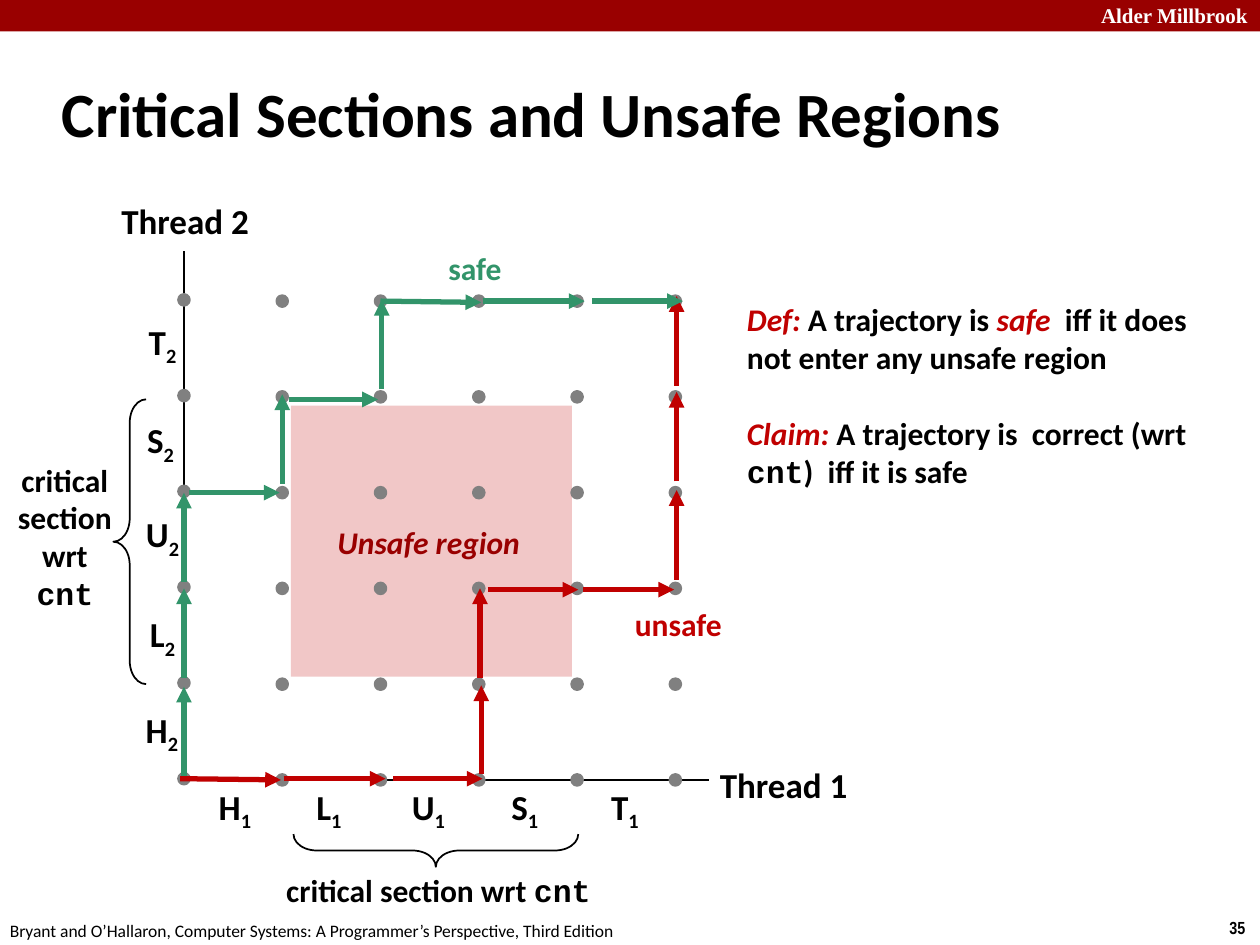
from itertools import product
from lxml.etree import SubElement as Sub
from pptx import Presentation
from pptx.dml.color import RGBColor as RGB
from pptx.enum.shapes import MSO_CONNECTOR as Conn, MSO_SHAPE as Kind
from pptx.enum.text import MSO_ANCHOR as Anchor, PP_ALIGN as Align
from pptx.oxml.ns import qn
from pptx.util import Inches, Pt

HUES = {
    "bar": "990000", "zone": "F1C7C7", "dot": "808080", "ink": "000000",
    "white": "FFFFFF", "safe": "32946A", "unsafe": "C00000",
}
SAFE = [
    (1.46, 6.16, 1.46, 5.45), (1.46, 5.38, 1.46, 4.67),
    (1.46, 4.62, 1.46, 3.91), (1.5, 3.91, 2.22, 3.91),
    (2.24, 3.84, 2.24, 3.13), (2.29, 3.17, 3, 3.17),
    (3.03, 3.09, 3.03, 2.38), (3.02, 2.39, 3.82, 2.4),
    (3.83, 2.39, 4.64, 2.39), (4.7, 2.39, 5.42, 2.39),
]
UNSAFE = [
    (1.43, 6.18, 2.23, 6.19), (2.25, 6.18, 3.06, 6.18),
    (3.12, 6.18, 3.83, 6.18), (3.82, 6.14, 3.82, 5.44),
    (3.81, 5.38, 3.81, 4.67), (3.87, 4.68, 4.59, 4.68),
    (4.63, 4.68, 5.35, 4.68), (5.37, 4.6, 5.37, 3.89),
    (5.37, 3.82, 5.37, 3.11), (5.37, 3.06, 5.37, 2.35),
]
STEPS = [
    ("H", 0.47, 1.63, 5.59, 1.05), ("L", 0.42, 2.4, 4.83, 1.08),
    ("U", 0.48, 3.16, 4.04, 1.05), ("S", 0.43, 3.95, 3.29, 1.06),
    ("T", 0.44, 4.74, 2.51, 1.07),
]


def put(item, vals):
    for name, val in vals.items():
        setattr(item, name, val)


class Board:
    base = {"size": 18, "name": "Calibri", "bold": True, "hue": "ink"}

    def __init__(self, slide):
        self.slide = slide
        self.shapes = slide.shapes

    def piece(self, para, text, low=False, **look):
        run = para.add_run()
        run.text = text
        look = {**self.base, **look}
        run.font.color.rgb = RGB.from_string(HUES[look.pop("hue")])
        look["size"] = Pt(look["size"])
        put(run.font, look)
        if low:
            run.font._element.set("baseline", "-25000")

    def fill(self, frame, paras, align=Align.LEFT, gap=0, **look):
        for num, runs in enumerate(paras):
            para = frame.add_paragraph() if num else frame.paragraphs[0]
            put(para, {"alignment": align, "space_before": Pt(gap if num else 0)})
            for text, extra in runs:
                self.piece(para, text, **{**look, **extra})

    def title(self, text, box, **look):
        head = self.shapes.title
        put(head, dict(zip(("left", "top", "width", "height"), map(Inches, box))))
        put(head.text_frame, {"vertical_anchor": Anchor.MIDDLE, "word_wrap": True})
        self.fill(head.text_frame, [[(text, {})]], **look)

    def text(self, paras, box, wrap=False, anchor=Anchor.TOP, inset=0.05, **look):
        frame = self.shapes.add_textbox(*map(Inches, box)).text_frame
        put(frame, {
            "word_wrap": wrap, "vertical_anchor": anchor,
            "margin_top": Inches(inset), "margin_bottom": Inches(inset),
        })
        if isinstance(paras, str):
            paras = [[(paras, {})]]
        self.fill(frame, paras, **look)

    def label(self, runs, box, **look):
        self.text([runs], box, anchor=Anchor.MIDDLE, align=Align.CENTER, **look)

    def shape(self, kind, box, fill=None, line=None, width=1):
        item = self.shapes.add_shape(kind, *map(Inches, box))
        item.shadow.inherit = False
        for part, hue in ((item.fill, fill), (item.line.fill, line)):
            if hue:
                part.solid()
                part.fore_color.rgb = RGB.from_string(HUES[hue])
            else:
                part.background()
        if line:
            item.line.width = Pt(width)
        return item

    def brace(self, box, turn=0):
        item = self.shape(Kind.LEFT_BRACE, box, line="ink")
        item.adjustments[0] = 0.715
        item.rotation = turn

    def line(self, ends, hue="ink", width=1, head=False):
        item = self.shapes.add_connector(Conn.STRAIGHT, *map(Inches, ends))
        item.line.color.rgb = RGB.from_string(HUES[hue])
        item.line.width = Pt(width)
        if head:
            Sub(item.line._get_or_add_ln(), qn("a:tailEnd"), type="triangle")
        Sub(item._element.spPr, qn("a:effectLst"))

    def route(self, moves, hue):
        for ends in moves:
            self.line(ends, hue, 3, True)


def main():
    deck = Presentation()
    put(deck, {"slide_width": Inches(10), "slide_height": Inches(7.5)})
    board = Board(deck.slides.add_slide(deck.slide_layouts[5]))

    board.shape(Kind.RECTANGLE, (0, 0, 10, 0.25), "bar")
    board.text("Alder Millbrook", (8.64, -0.03, 1.43, 0.3),
               size=12, name="Times New Roman", hue="white")
    board.text("35", (9.66, 7.23, 0.34, 0.27), size=10, name="Arial Narrow")
    board.text("Bryant and O’Hallaron, Computer Systems: "
               "A Programmer’s Perspective, Third Edition",
               (-0.02, 7.25, 5.08, 0.27), size=10, bold=False)
    board.title("Critical Sections and Unsafe Regions",
                (0.39, 0.48, 8.3, 0.83), size=36)

    board.shape(Kind.RECTANGLE, (2.31, 3.22, 2.23, 2.15), "zone")
    board.line((1.46, 6.19, 5.63, 6.19))
    board.line((1.46, 6.19, 1.46, 1.99))
    for name, wide, left, top, side in STEPS:
        for num, x, y in (("1", left, 6.2), ("2", side, top)):
            board.label([(name, {}), (num, {"low": True})],
                        (x, y, wide, 0.44), size=20)
    board.label([("Thread 1", {})], (5.61, 6.01, 1.22, 0.44), size=20)
    board.label([("Thread 2", {})], (0.86, 1.53, 1.22, 0.44), size=20)

    for col, row in product(range(6), repeat=2):
        base = 6.15 if col else 6.14
        board.shape(Kind.OVAL, (1.42 + 0.78 * col, base - 0.76 * row, 0.08, 0.08),
                    "dot", "dot", 2)

    board.brace((0.9, 3.17, 0.26, 2.26))
    board.brace((3.33, 5.62, 0.26, 2.26), 270)
    mono = {"name": "Courier New"}
    crit = [("critical section wrt ", {}), ("cnt", mono)]
    board.label(crit, (2.16, 6.86, 2.64, 0.4))
    board.label(crit, (0, 3.6, 1.03, 1.31), wrap=True)
    board.text("Unsafe region", (2.58, 4.1, 1.67, 0.4), hue="bar", italic=True)

    key = {"hue": "unsafe", "italic": True}
    board.text([
        [("Def: ", key), ("A trajectory is ", {}), ("safe  ", key),
         ("iff it does not enter any unsafe region", {})],
        [("Claim: ", key), ("A trajectory is  correct (wrt ", {}),
         ("cnt", mono), (")  iff it is safe", {})],
    ], (5.83, 2.38, 3.83, 1.82), wrap=True, inset=0, gap=22)

    board.route(UNSAFE, "unsafe")
    board.text("unsafe", (4.94, 4.75, 0.9, 0.4), hue="unsafe")
    board.route(SAFE, "safe")
    board.text("safe", (3.46, 1.93, 0.63, 0.4), hue="safe")
    deck.save("out.pptx")


if __name__ == "__main__":
    main()
